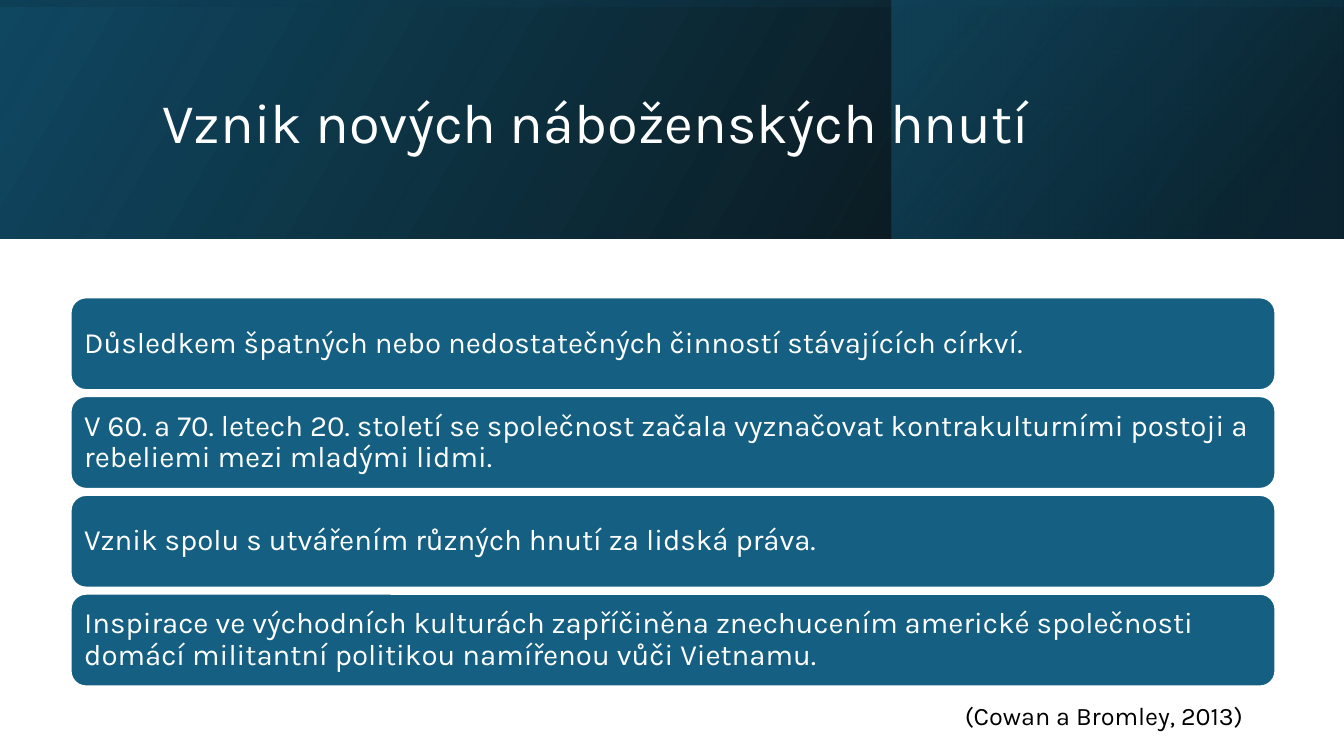
from lxml import etree
from pptx import Presentation
from pptx.dml.color import RGBColor
from pptx.enum import shapes, text
from pptx.oxml.ns import qn
from pptx.util import Inches, Pt

COLORS = {
    "white": "FFFFFF",
    "black": "000000",
    "teal": "156082",
    "deep_teal": "104862",
    "night": "0B3041",
}
REASONS = [
    "Důsledkem špatných nebo nedostatečných činností stávajících církví.",
    "V 60. a 70. letech 20. století se společnost začala vyznačovat "
    "kontrakulturními postoji a rebeliemi mezi mladými lidmi.",
    "Vznik spolu s utvářením různých hnutí za lidská práva.",
    "Inspirace ve východních kulturách zapříčiněna znechucením americké "
    "společnosti domácí militantní politikou namířenou vůči Vietnamu.",
]


def rgb(name):
    return RGBColor.from_string(COLORS[name])


class SlideBuilder:
    font_name = "Karla"

    def __init__(self, presentation):
        self.slide = presentation.slides.add_slide(presentation.slide_layouts[5])

    def set_text(self, shape, content, size, color, frame_format=None, **paragraph_format):
        """Fill a shape with one formatted paragraph."""
        frame = shape.text_frame
        frame.text = content
        paragraph = frame.paragraphs[0]
        font_format = {"name": self.font_name, "size": Pt(size)}
        paragraph_format = {"alignment": text.PP_ALIGN.LEFT, **paragraph_format}
        for target, values in (
            (frame, {"word_wrap": True, **(frame_format or {})}),
            (paragraph, paragraph_format),
            (paragraph.runs[0].font, font_format),
        ):
            for attribute, value in values.items():
                setattr(target, attribute, value)
        paragraph.runs[0].font.color.rgb = rgb(color)

    def box(self, kind, place):
        shape = self.slide.shapes.add_shape(kind, *map(Inches, place))
        shape.shadow.inherit = False
        return shape

    def gradient_band(self, place, angle, stops, rotation=0):
        """Add a mirrored gradient band; stops are (position, colour, opacity %)."""
        shape = self.box(shapes.MSO_SHAPE.RECTANGLE, place)
        shape.rotation = rotation
        shape.line.fill.background()
        properties = shape._element.spPr
        properties.find(qn("a:xfrm")).set("flipH", "1")
        shape.fill.gradient()
        shape.fill.gradient_angle = 360 - angle
        for stop, (position, color, _) in zip(shape.fill.gradient_stops, stops):
            stop.position = position
            stop.color.rgb = rgb(color)
        color_elements = properties.iter(qn("a:srgbClr"))
        for element, (_, _, opacity) in zip(list(color_elements), stops):
            etree.SubElement(element, qn("a:alpha"), val=str(opacity * 1000))

    def title(self, content, place):
        shape = self.slide.shapes.title
        for side, length in zip(("left", "top", "width", "height"), place):
            setattr(shape, side, Inches(length))
        self.set_text(shape, content, 40, "white",
                      {"vertical_anchor": text.MSO_ANCHOR.MIDDLE}, line_spacing=0.9)
        # Bring the title in front of the bands
        self.slide.shapes._spTree.append(shape._element)

    def card(self, content, place):
        shape = self.box(shapes.MSO_SHAPE.ROUNDED_RECTANGLE, place)
        shape.fill.solid()
        shape.fill.fore_color.rgb = rgb("teal")
        shape.line.color.rgb = rgb("white")
        shape.line.width = Pt(1.5)
        margins = {f"margin_{side}": Inches(0.09)
                   for side in ("left", "top", "right", "bottom")}
        self.set_text(shape, content, 21, "white",
                      {"vertical_anchor": text.MSO_ANCHOR.MIDDLE, **margins},
                      line_spacing=0.9)

    def citation(self, content, place):
        shape = self.slide.shapes.add_textbox(*map(Inches, place))
        self.set_text(shape, content, 18, "black",
                      {"auto_size": text.MSO_AUTO_SIZE.SHAPE_TO_FIT_TEXT})


def main():
    presentation = Presentation()
    presentation.slide_width = Inches(13.33)
    presentation.slide_height = Inches(7.5)
    builder = SlideBuilder(presentation)

    # Header bands
    builder.gradient_band((0, 0, 13.33, 2.37), 330,
                          [(0, "black", 96), (1, "deep_teal", 100)])
    builder.gradient_band((8.84, 0, 4.48, 2.37), 320,
                          [(0.19, "night", 68), (1, "teal", 48)])
    builder.gradient_band((5.48, -5.48, 2.37, 13.33), 350,
                          [(0.23, "deep_teal", 16), (0.99, "black", 45)], rotation=270)
    builder.title("Vznik nových náboženských hnutí", (1.51, 0.38, 10.63, 1.72))

    # Stacked reasons
    for row, reason in enumerate(REASONS):
        builder.card(reason, (0.7, 2.95 + row * 0.98, 11.95, 0.92))

    # Source
    builder.citation("(Cowan a Bromley, 2013)", (9.47, 6.9, 3.39, 0.4))
    presentation.save("out.pptx")


if __name__ == "__main__":
    main()
